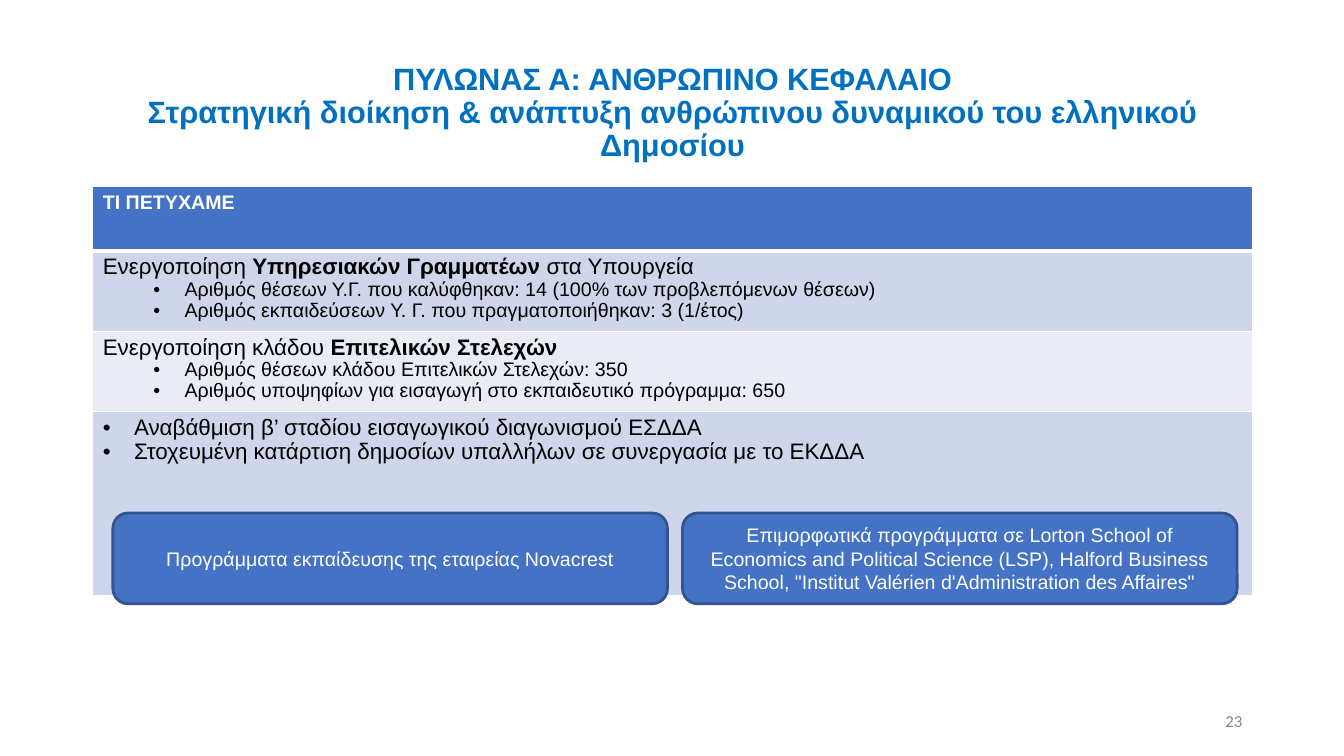
import lxml.etree
import pptx
import pptx.dml.color
import pptx.enum.shapes
import pptx.enum.text
import pptx.oxml.ns
import pptx.util
from pptx.util import Inches

ALIGN = pptx.enum.text.PP_ALIGN
ANCHOR = pptx.enum.text.MSO_ANCHOR
BLUE, WHITE, BLACK = "4472C4", "FFFFFF", "000000"
DARK_BAND, LIGHT_BAND = "CFD5EA", "E9EBF5"
TABLE_LEFT, TABLE_TOP, TABLE_WIDTH = 0.92, 1.85, 11.5

# Each row: height, fill, paragraphs; a paragraph is (runs, format)
BODY = {"size": 16, "spacing": 0.95}
BULLET = {**BODY, "indent": 0.31}
SUB_BULLET = {"size": 14, "spacing": 0.95, "indent": 0.81}
ROWS = [
    (0.64, BLUE, [
        ([("ΤΙ ΠΕΤΥΧΑΜΕ", True)], {"size": 14, "color": WHITE}),
    ]),
    (0.78, DARK_BAND, [
        ([("Ενεργοποίηση ", False), ("Υπηρεσιακών Γραμματέων ", True),
          ("στα Υπουργεία", False)], BODY),
        ([("Αριθμός θέσεων Υ.Γ. που καλύφθηκαν: 14 (100% των προβλεπόμενων θέσεων)",
           False)], SUB_BULLET),
        ([("Αριθμός εκπαιδεύσεων Υ. Γ. που πραγματοποιήθηκαν: 3 (1/έτος)",
           False)], SUB_BULLET),
    ]),
    (0.78, LIGHT_BAND, [
        ([("Ενεργοποίηση κλάδου ", False), ("Επιτελικών Στελεχών", True)], BODY),
        ([("Αριθμός θέσεων κλάδου Επιτελικών Στελεχών: 350", False)], SUB_BULLET),
        ([("Αριθμός υποψηφίων για εισαγωγή στο εκπαιδευτικό πρόγραμμα: 650",
           False)], SUB_BULLET),
    ]),
    (1.83, DARK_BAND, [
        ([("Αναβάθμιση β’ σταδίου εισαγωγικού διαγωνισμού ΕΣΔΔΑ", False)], BULLET),
        ([("Στοχευμένη κατάρτιση δημοσίων υπαλλήλων σε συνεργασία με το ΕΚΔΔΑ",
           False)], BULLET),
    ]),
]

PROGRAMMES = [
    (1.12, "Προγράμματα εκπαίδευσης της εταιρείας Novacrest"),
    (6.77, "Επιμορφωτικά προγράμματα σε Lorton School of Economics and Political "
           "Science (LSP), Halford Business School, "
           "\"Institut Valérien d'Administration des Affaires\""),
]


def rgb(value):
    return pptx.dml.color.RGBColor.from_string(value)


def add_bullet(paragraph, indent):
    properties = paragraph._p.get_or_add_pPr()
    properties.set("marL", str(Inches(indent)))
    properties.set("indent", str(-Inches(0.31)))
    for tag, attribute, value in (("a:buFont", "typeface", "Arial"),
                                  ("a:buChar", "char", "•")):
        element = lxml.etree.SubElement(properties, pptx.oxml.ns.qn(tag))
        element.set(attribute, value)


def write_paragraph(paragraph, text, size=14, color=BLACK, font="Arial", bold=False,
                    align=ALIGN.LEFT, spacing=None, indent=None):
    """Write a string, or a list of (text, bold) runs, into a paragraph."""
    paragraph.alignment = align
    if spacing:
        paragraph.line_spacing = spacing
    if indent:
        add_bullet(paragraph, indent)
    runs = [(text, bold)] if isinstance(text, str) else text
    for words, is_bold in runs:
        for index, line in enumerate(words.split("\n")):
            if index:
                paragraph.add_line_break()
            run = paragraph.add_run()
            run.text = line
            run.font.size = pptx.util.Pt(size)
            run.font.name = font
            run.font.bold = is_bold
            run.font.color.rgb = rgb(color)


def add_text(slide, left, top, width, height, text, **text_format):
    box = slide.shapes.add_textbox(Inches(left), Inches(top), Inches(width), Inches(height))
    box.text_frame.word_wrap = True
    box.text_frame.vertical_anchor = ANCHOR.MIDDLE
    write_paragraph(box.text_frame.paragraphs[0], text, **text_format)


def add_rounded_box(slide, left, top, width, height, text):
    shape = slide.shapes.add_shape(pptx.enum.shapes.MSO_SHAPE.ROUNDED_RECTANGLE,
                                   Inches(left), Inches(top), Inches(width), Inches(height))
    shape.shadow.inherit = False
    shape.fill.solid()
    shape.fill.fore_color.rgb = rgb(BLUE)
    shape.line.color.rgb = rgb("325491")
    shape.line.width = pptx.util.Pt(2)
    shape.text_frame.word_wrap = True
    shape.text_frame.vertical_anchor = ANCHOR.MIDDLE
    write_paragraph(shape.text_frame.paragraphs[0], text, color=WHITE, align=ALIGN.CENTER)


def set_border(cell, side, width):
    properties = cell._tc.get_or_add_tcPr()
    line = lxml.etree.Element(pptx.oxml.ns.qn(f"a:ln{side}"), w=str(pptx.util.Pt(width)))
    fill = lxml.etree.SubElement(line, pptx.oxml.ns.qn("a:solidFill"))
    lxml.etree.SubElement(fill, pptx.oxml.ns.qn("a:srgbClr"), val=WHITE)
    # Borders come before the cell fill
    properties.insert("LRTB".index(side), line)


def add_results_table(slide):
    total_height = sum(height for height, _, _ in ROWS)
    table = slide.shapes.add_table(len(ROWS), 1, Inches(TABLE_LEFT), Inches(TABLE_TOP),
                                   Inches(TABLE_WIDTH), Inches(total_height)).table
    for index, (height, fill, paragraphs) in enumerate(ROWS):
        table.rows[index].height = Inches(height)
        cell = table.cell(index, 0)
        cell.fill.solid()
        cell.fill.fore_color.rgb = rgb(fill)
        for side in "LRTB":
            # A thick rule separates the header from the body
            is_header_rule = (index, side) in ((0, "B"), (1, "T"))
            set_border(cell, side, 3 if is_header_rule else 1)
        for number, (runs, text_format) in enumerate(paragraphs):
            frame = cell.text_frame
            paragraph = frame.add_paragraph() if number else frame.paragraphs[0]
            write_paragraph(paragraph, runs, **text_format)


def main():
    presentation = pptx.Presentation()
    presentation.slide_width = Inches(13.33)
    presentation.slide_height = Inches(7.5)
    slide = presentation.slides.add_slide(presentation.slide_layouts[6])

    # Title
    add_text(slide, TABLE_LEFT, 0.4, TABLE_WIDTH, 1.45,
             "ΠΥΛΩΝΑΣ Α: ΑΝΘΡΩΠΙΝΟ ΚΕΦΑΛΑΙΟ\n"
             "Στρατηγική διοίκηση & ανάπτυξη ανθρώπινου δυναμικού του ελληνικού Δημοσίου",
             size=22, color="0070C0", bold=True, align=ALIGN.CENTER, spacing=0.9)

    # Results
    add_results_table(slide)

    # Training programmes
    for left, text in PROGRAMMES:
        add_rounded_box(slide, left, 5.09, 5.5, 0.9, text)

    # Slide number
    add_text(slide, 9.42, 6.95, 3, 0.4, "23", size=12, color="888888",
             font="Calibri", align=ALIGN.RIGHT)

    presentation.save("out.pptx")


if __name__ == "__main__":
    main()
